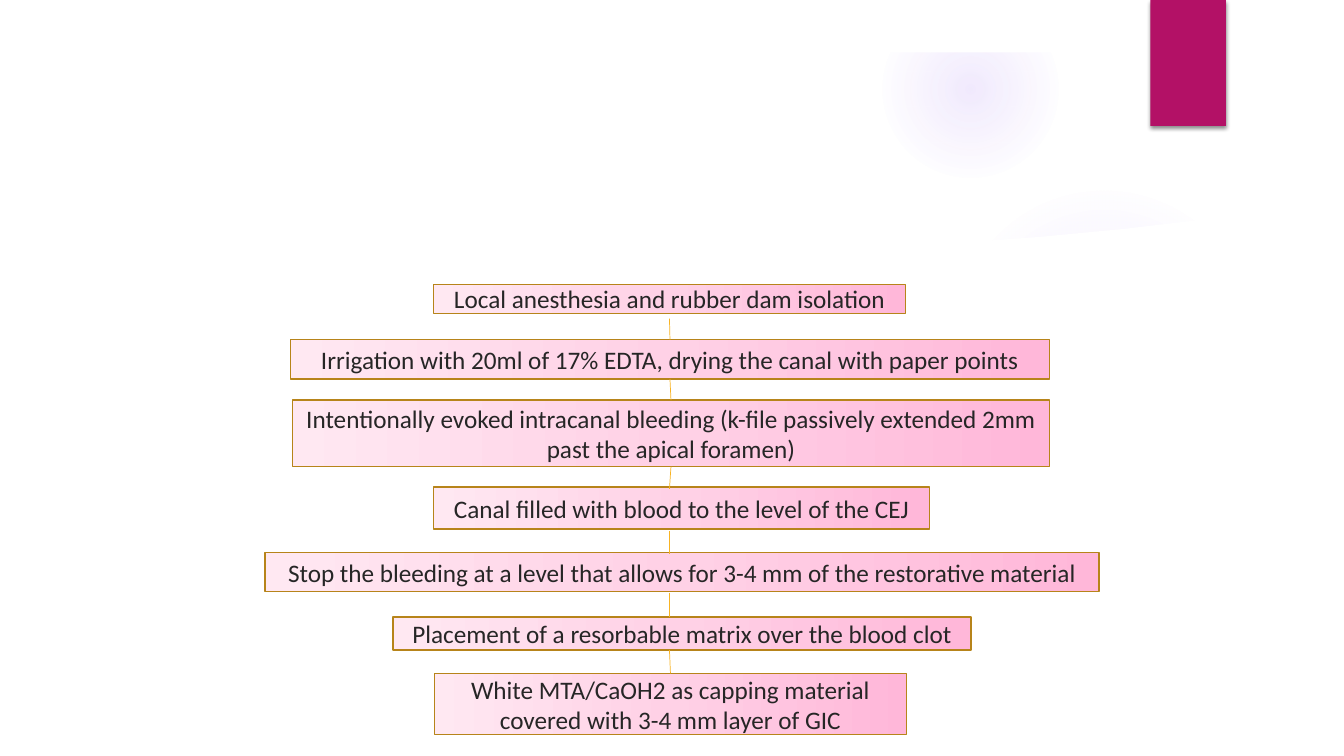
from dataclasses import dataclass

from lxml import etree
from pptx import Presentation
from pptx.dml.color import RGBColor
from pptx.enum.shapes import MSO_CONNECTOR, MSO_SHAPE
from pptx.enum.text import MSO_ANCHOR, PP_ALIGN
from pptx.oxml import parse_xml
from pptx.oxml.ns import nsdecls, qn
from pptx.util import Inches, Pt

RECT, OVAL = MSO_SHAPE.RECTANGLE, MSO_SHAPE.OVAL
LINE = MSO_CONNECTOR.STRAIGHT
MIDDLE, CENTER = MSO_ANCHOR.MIDDLE, PP_ALIGN.CENTER


@dataclass(frozen=True)
class Theme:
    paper: str = "FFFFFF"
    glow: str = "9B6BF2"
    tab: str = "B31166"
    edge: str = "B7841A"
    link: str = "F8B323"
    ink: str = "262626"
    shade: str = "000000"
    pinks: tuple = ((0, "FFB7D9", 100), (50, "FFD1E6", 100), (100, "FFE8F2", 100))
    font: str = "Calibri"
    size: int = 18


THEME = Theme()

# Left, top, width, height within the flow, then the wording
STEPS = (
    (1.67, 0, 4.68, 0.29, "Local anesthesia and rubber dam isolation"),
    (0.25, 0.55, 7.53, 0.39,
     "Irrigation with 20ml of 17% EDTA, drying the canal with paper points"),
    (0.27, 1.15, 7.51, 0.66,
     "Intentionally evoked intracanal bleeding (k-file passively extended 2mm "
     "past the apical foramen)"),
    (1.67, 2.01, 4.92, 0.42, "Canal filled with blood to the level of the CEJ"),
    (0, 2.66, 8.27, 0.39,
     "Stop the bleeding at a level that allows for 3-4 mm of the restorative material"),
    (1.27, 3.3, 5.73, 0.33, "Placement of a resorbable matrix over the blood clot"),
    (1.68, 3.86, 4.68, 0.61,
     "White MTA/CaOH2 as capping material covered with 3-4 mm layer of GIC"),
)
LINKS = ((0.34, 0.55), (0.94, 1.15), (1.83, 2.03), (2.45, 2.68), (3.06, 3.3), (3.63, 3.86))
AXIS = 4.01
NEAR = 0.03

# Top edge of the white panel, right to left
CURVE = ((12.34, 0), (11.5, 0.13), (10.66, 0.23), (9.82, 0.31), (8.99, 0.37),
         (8.17, 0.41), (6.58, 0.44), (5.33, 0.43), (3.94, 0.37), (2.71, 0.29),
         (1.37, 0.17), (0, 0))

# Box within the slide, then gradient stops: place, opacity
GLOWS = (
    ((9.41, 1.83, 3.08, 3.08), ((0, 7), (36, 6), (69, 0))),
    ((8.75, 0.01, 1.75, 1.75), ((0, 14), (36, 7), (73, 0))),
)


def style(item, values):
    for name, value in values.items():
        setattr(item, name, value)


def paint(shape, tint):
    shape.shadow.inherit = False
    shape.fill.solid()
    shape.fill.fore_color.rgb = RGBColor.from_string(tint)
    shape.line.fill.background()


def blend(shape, stops, course):
    """Replace the plain fill by a gradient."""
    marks = "".join(
        f'<a:gs pos="{spot * 1000}"><a:srgbClr val="{tint}">'
        f'<a:alpha val="{alpha * 1000}"/></a:srgbClr></a:gs>'
        for spot, tint, alpha in stops)
    grad = parse_xml(f'<a:gradFill {nsdecls("a")} rotWithShape="1">'
                     f'<a:gsLst>{marks}</a:gsLst>{course}</a:gradFill>')
    frame = shape._element.spPr
    frame.replace(frame.find(qn("a:solidFill")), grad)


def add_box(slide, kind, box, tint):
    shape = slide.shapes.add_shape(kind, *map(Inches, box))
    paint(shape, tint)
    return shape


def outline(slide, box, rings):
    """Draw closed white outlines within a box."""
    left, top = box[:2]
    rings = [[(Inches(left + x), Inches(top + y)) for x, y in ring] for ring in rings]
    pen = slide.shapes.build_freeform(*rings[0][0])
    pen.add_line_segments(rings[0][1:], close=True)
    for ring in rings[1:]:
        pen.move_to(*ring[0])
        pen.add_line_segments(ring[1:], close=True)
    paint(pen.convert_to_shape(), THEME.paper)


def draw_back(slide, box):
    left, top, width, height = box
    # Soft glows
    course = ('<a:path path="circle"><a:fillToRect l="50000" t="50000" '
              'r="50000" b="50000"/></a:path>')
    for (x, y, w, h), stops in GLOWS:
        disc = add_box(slide, OVAL, (left + x, top + y, w, h), THEME.glow)
        blend(disc, [(spot, THEME.glow, alpha) for spot, alpha in stops], course)
    # Curved panel
    outline(slide, (left + 0.5, top + 2.04), [CURVE + ((0, 4.96), (12.34, 4.96))])
    # Slide border with a window
    rim = 0.52
    outer = [(0, 0), (0, height), (width, height), (width, 0)]
    inner = [(width - rim, height - rim), (rim, height - rim), (rim, rim), (width - rim, rim)]
    outline(slide, box, [outer, inner])


def draw_tab(slide, box):
    tab = add_box(slide, RECT, box, THEME.tab)
    cast = parse_xml(
        f'<a:outerShdw {nsdecls("a")} blurRad="{Pt(3)}" dist="{Pt(2)}" dir="5400000" '
        f'rotWithShape="0"><a:srgbClr val="{THEME.shade}"><a:alpha val="45000"/>'
        '</a:srgbClr></a:outerShdw>')
    tab._element.spPr.find(qn("a:effectLst")).append(cast)


def add_step(slide, box, text):
    step = add_box(slide, RECT, box, THEME.pinks[0][1])
    blend(step, THEME.pinks, '<a:lin ang="10800000" scaled="0"/>')
    step.line.color.rgb = RGBColor.from_string(THEME.edge)
    step.line.width = Pt(1)
    frame = step.text_frame
    style(frame, {"word_wrap": True, "vertical_anchor": MIDDLE})
    para = frame.paragraphs[0]
    style(para, {"text": text, "alignment": CENTER})
    style(para.font, {"name": THEME.font, "size": Pt(THEME.size)})
    para.font.color.rgb = RGBColor.from_string(THEME.ink)
    return step


def draw_flow(slide, box):
    left, top = box[:2]
    # Step boxes
    steps = [add_step(slide, (left + x, top + y, w, h), text)
             for x, y, w, h, text in STEPS]
    # Links, joined where they meet the middle of a side
    for i, (start, end) in enumerate(LINKS):
        link = slide.shapes.add_connector(
            LINE, *map(Inches, (left + AXIS, top + start, left + AXIS, top + end)))
        link.line.color.rgb = RGBColor.from_string(THEME.link)
        link.line.width = Pt(0.5)
        etree.SubElement(link._element.spPr, qn("a:effectLst"))
        for n, y, side, join in ((i, start, 2, link.begin_connect),
                                 (i + 1, end, 0, link.end_connect)):
            x, head, w, h = STEPS[n][:4]
            edge = head + h if side == 2 else head
            if abs(x + w / 2 - AXIS) < NEAR and abs(edge - y) < NEAR:
                join(steps[n], side)


def main():
    deck = Presentation()
    style(deck, {"slide_width": Inches(13.33), "slide_height": Inches(7.5)})
    slide = deck.slides.add_slide(deck.slide_layouts[6])
    draw_back(slide, (0, 0, 13.33, 7.5))
    draw_tab(slide, (11.41, 0, 0.75, 1.25))
    draw_flow(slide, (2.63, 2.82, 8.27, 4.47))
    deck.save("out.pptx")


if __name__ == "__main__":
    main()
